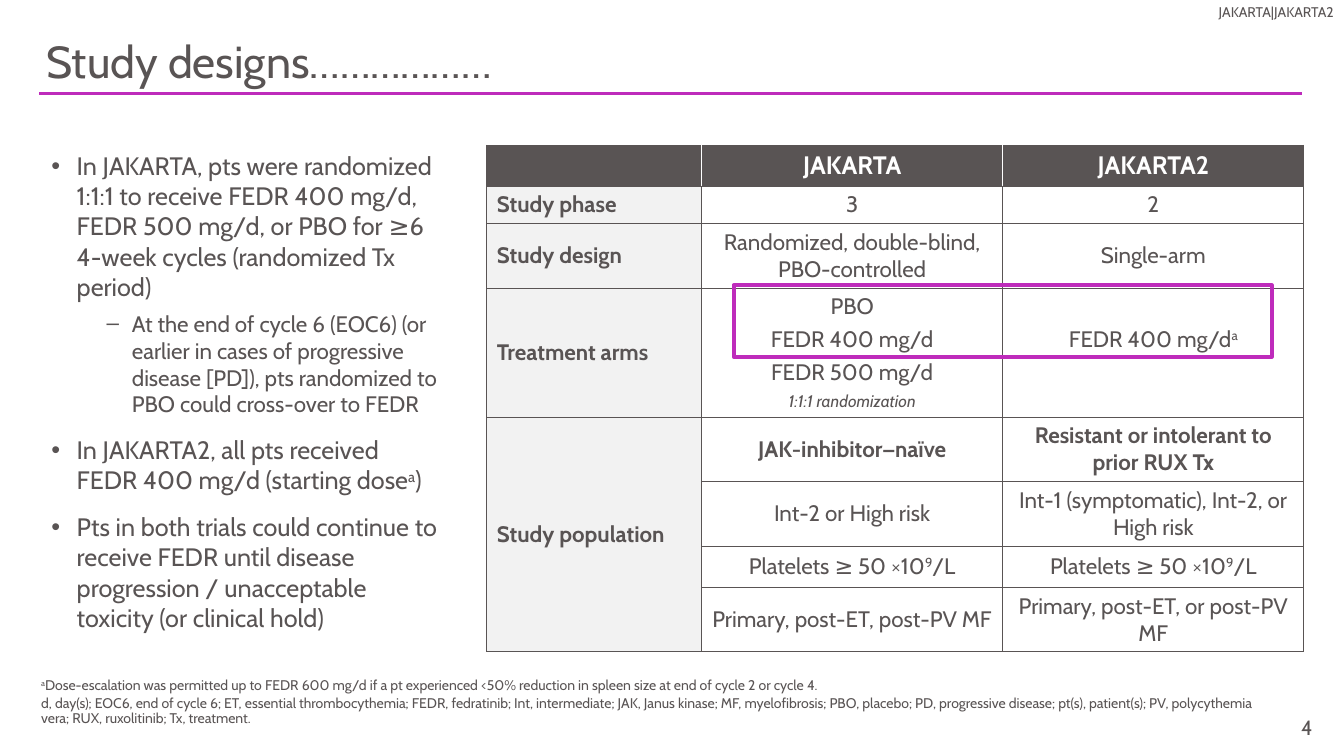
from lxml.etree import SubElement
from pptx import Presentation
from pptx.dml.color import RGBColor as Rgb
from pptx.enum.shapes import MSO_CONNECTOR as Link, MSO_SHAPE as Shape
from pptx.enum.text import MSO_ANCHOR as Anchor, MSO_AUTO_SIZE as Auto, PP_ALIGN as Align
from pptx.oxml import parse_xml
from pptx.oxml.ns import nsdecls, qn
from pptx.util import Cm, Pt

HUES = {"ink": "595454", "pink": "BE2BBB", "pale": "F2F2F2", "white": "FFFFFF"}
FONT = "Cabin"
LIST = [
    (0, 6, "In JAKARTA, pts were randomized 1:1:1 to receive FEDR 400 mg/d, FEDR 500 mg/d, "
           "or PBO for ≥6 4-week cycles (randomized Tx period)"),
    (1, 12, "At the end of cycle 6 (EOC6) (or earlier in cases of progressive disease [PD]), "
            "pts randomized to PBO could cross-over to FEDR"),
    (0, 12, "In JAKARTA2, all pts received FEDR 400 mg/d (starting dose^a^)"),
    (0, 12, "Pts in both trials could continue to receive FEDR until disease progression / "
            "unacceptable toxicity (or clinical hold)"),
]
ROWS = [
    ("", "JAKARTA", "JAKARTA2"),
    ("Study phase", "3", "2"),
    ("Study design", "Randomized, double-blind, PBO-controlled", "Single-arm"),
    ("Treatment arms", "PBO\nFEDR 400 mg/d\nFEDR 500 mg/d\n1:1:1 randomization", "FEDR 400 mg/d^a^"),
    ("Study population", "JAK-inhibitor^–^naïve", "Resistant or intolerant to prior RUX Tx"),
    ("", "Int-2 or High risk", "Int-1 (symptomatic), Int-2, or High risk"),
    ("", "Platelets ≥ 50 ×10^9^/L", "Platelets ≥ 50 ×10^9^/L"),
    ("", "Primary, post-ET, post-PV MF", "Primary, post-ET, or post-PV MF"),
]
WIDTHS = (5.41, 7.59, 7.59)
HEIGHTS = (1.03, 0.93, 1.63, 3.25, 1.62, 1.63, 1.04, 1.63)
ARMS, GROUP = 3, 4
NOTES = [
    "^a^Dose-escalation was permitted up to FEDR 600 mg/d if a pt experienced <50% reduction "
    "in spleen size at end of cycle 2 or cycle 4.",
    "d, day(s); EOC6, end of cycle 6; ET, essential thrombocythemia; FEDR, fedratinib; "
    "Int, intermediate; JAK, Janus kinase; MF, myelofibrosis; PBO, placebo; PD, progressive "
    "disease; pt(s), patient(s); PV, polycythemia vera; RUX, ruxolitinib; Tx, treatment.",
]


class Deck:
    """Holds the style and the current slide, and draws each kind of element."""

    def __init__(self):
        self.prs = Presentation()
        self.prs.slide_width, self.prs.slide_height = Cm(33.87), Cm(19.05)
        self.slide = self.prs.slides.add_slide(self.prs.slide_layouts[1])
        self.shapes = self.slide.shapes

    def hue(self, name):
        return Rgb.from_string(HUES[name])

    def place(self, shape, spot):
        shape.left, shape.top, shape.width, shape.height = map(Cm, spot)

    def style(self, para, text, size, hue="ink", bold=False, align=Align.LEFT,
              after=0, line=1.0, italic=False):
        for i, part in enumerate(text.split("^")):
            if not part:
                continue
            run = para.add_run()
            run.text = part
            if i % 2 and part == "–":
                run.font.name = "Arial"
            elif i % 2:
                run.font._element.set("baseline", "30000")
        para.alignment, para.line_spacing = align, line
        para.space_before, para.space_after = Pt(0), Pt(after)
        font = para.font
        font.name, font.size, font.bold, font.italic = FONT, Pt(size), bold, italic
        font.color.rgb = self.hue(hue)

    def fill(self, frame, texts, *args, **looks):
        for i, text in enumerate(texts):
            para = frame.add_paragraph() if i else frame.paragraphs[0]
            self.style(para, text, *args, **looks)

    def title(self, spot, text):
        shape = self.shapes.title
        self.place(shape, spot)
        frame = shape.text_frame
        frame.auto_size, frame.vertical_anchor = Auto.NONE, Anchor.BOTTOM
        frame.margin_left = frame.margin_right = Cm(0.13)
        self.fill(frame, [text], 32, line=0.9)

    def list(self, spot, items):
        shape = self.slide.placeholders[1]
        self.place(shape, spot)
        frame = shape.text_frame
        frame.auto_size, frame.vertical_anchor = Auto.NONE, Anchor.TOP
        for i, (level, after, text) in enumerate(items):
            para = frame.add_paragraph() if i else frame.paragraphs[0]
            para.level = level
            props = para._p.get_or_add_pPr()
            props.set("marL", str(Cm((0.64, 2.03)[level])))
            props.set("indent", str(Cm(-0.64)))
            tint = SubElement(props, qn("a:buClr"))
            SubElement(tint, qn("a:srgbClr")).set("val", HUES["ink"])
            SubElement(props, qn("a:buFont")).set("typeface", "Arial")
            SubElement(props, qn("a:buChar")).set("char", "•–"[level])
            self.style(para, text, (18, 16)[level], after=after)

    def text(self, spot, texts, size, anchor=Anchor.TOP, left=0.25, **looks):
        frame = self.shapes.add_textbox(*map(Cm, spot)).text_frame
        frame.word_wrap, frame.vertical_anchor = True, anchor
        frame.margin_left = Cm(left)
        self.fill(frame, texts, size, **looks)

    def rule(self, x, y, end):
        line = self.shapes.add_connector(Link.STRAIGHT, Cm(x), Cm(y), Cm(end), Cm(y))
        line.line.color.rgb, line.line.width = self.hue("pink"), Pt(2.25)
        SubElement(line._element.spPr, qn("a:effectLst"))

    def frame(self, spot):
        box = self.shapes.add_shape(Shape.RECTANGLE, *map(Cm, spot))
        box.shadow.inherit = False
        box.fill.background()
        box.line.color.rgb, box.line.width = self.hue("pink"), Pt(3)

    def edge(self, cell, row, col):
        sides = {side: ("ink", 0.75) for side in "LRTB"}
        if row == 0:
            if col:
                sides["L"] = ("white", 1)
            if col < len(WIDTHS) - 1:
                sides["R"] = ("white", 1)
        if col and row > GROUP:
            sides["T"] = ("ink", 0.25)
        if col and GROUP <= row < len(ROWS) - 1:
            sides["B"] = ("ink", 0.25)
        for i, (side, (hue, width)) in enumerate(sides.items()):
            cell._tc.get_or_add_tcPr().insert(i, parse_xml(
                f'<a:ln{side} {nsdecls("a")} w="{Pt(width)}"><a:solidFill>'
                f'<a:srgbClr val="{HUES[hue]}"/></a:solidFill></a:ln{side}>'))

    def table(self, x, y):
        spot = (x, y, sum(WIDTHS), sum(HEIGHTS))
        table = self.shapes.add_table(len(ROWS), len(WIDTHS), *map(Cm, spot)).table
        table.first_row = table.horz_banding = False
        for col, width in zip(table.columns, WIDTHS):
            col.width = Cm(width)
        table.cell(GROUP, 0).merge(table.cell(len(ROWS) - 1, 0))
        for r, texts in enumerate(ROWS):
            table.rows[r].height = Cm(HEIGHTS[r])
            for c, text in enumerate(texts):
                cell = table.cell(r, c)
                cell.fill.solid()
                back = "ink" if r == 0 else "white" if c else "pale"
                cell.fill.fore_color.rgb = self.hue(back)
                cell.vertical_anchor = Anchor.MIDDLE if r else Anchor.TOP
                self.edge(cell, r, c)
                if text:
                    self.fill(cell.text_frame, text.split("\n"), 16 if r else 18,
                              "ink" if r else "white", bold=c == 0 or r in (0, GROUP),
                              align=Align.CENTER if c else Align.LEFT,
                              after=4 if c and r == ARMS else 0)
        ratio = table.cell(ARMS, 1).text_frame.paragraphs[-1].font
        ratio.size, ratio.italic = Pt(12), True
        table.cell(ARMS, 2).margin_bottom = Cm(0.8)


def main():
    deck = Deck()
    deck.rule(0.99, 2.36, 32.82)
    deck.title((1.04, 0.46, 31.78, 1.88), "Study designs………………")
    deck.list((1.04, 3.66, 10.39, 13.06), LIST)
    deck.table(12.27, 3.66)
    deck.frame((18.49, 7.19, 13.56, 1.8))
    deck.text((1.04, 16.54, 31.34, 1.9), NOTES, 10, Anchor.BOTTOM, 0, after=2, line=0.9)
    deck.text((31.5, 17.81, 1.83, 1.02), ["4"], 14.7, Anchor.MIDDLE, align=Align.RIGHT)
    deck.text((27.36, 0, 6.5, 0.74), ["JAKARTA|JAKARTA2"], 10, align=Align.RIGHT, line=0.9)
    deck.prs.save("out.pptx")


if __name__ == "__main__":
    main()
